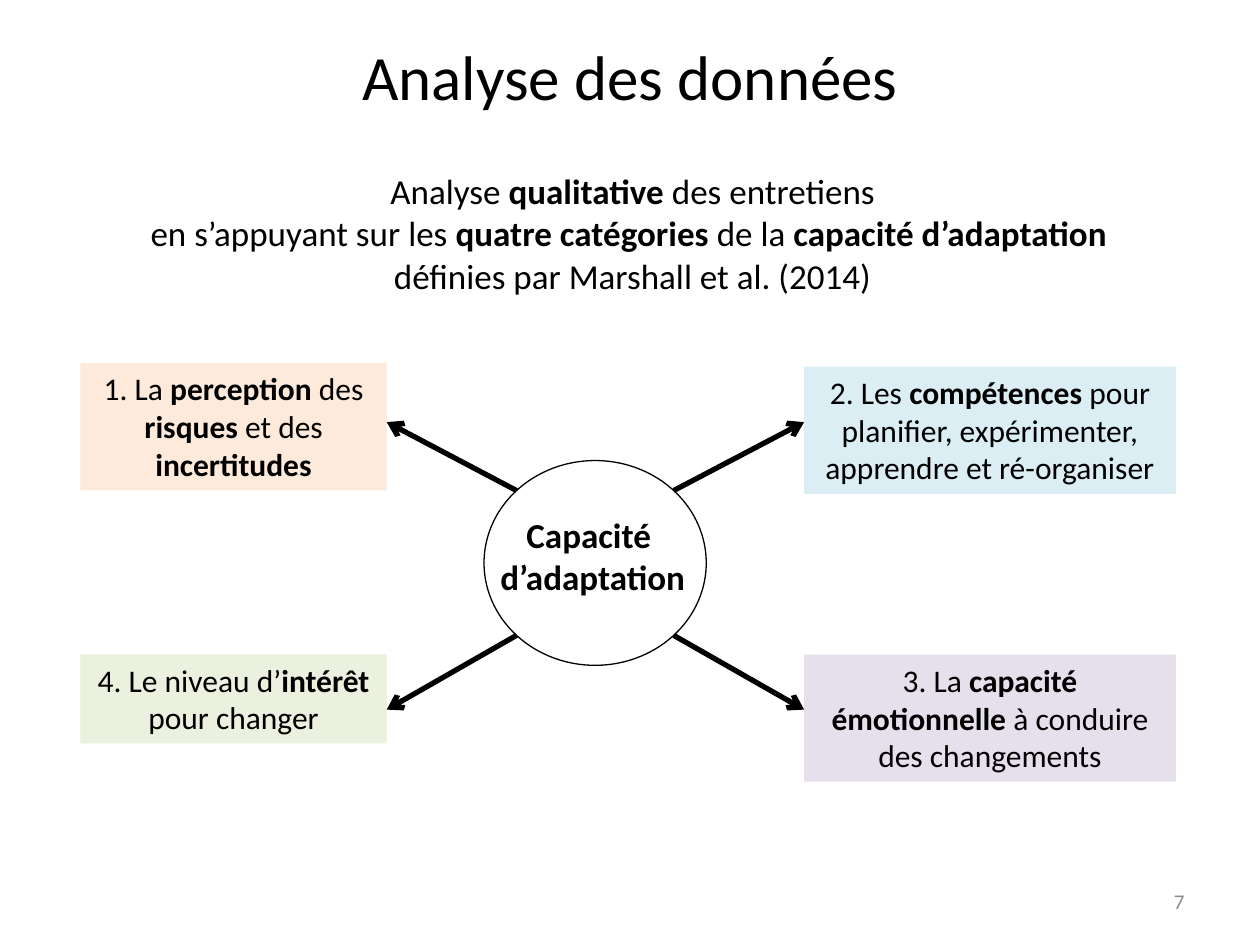
"""Build the slide on data analysis and the four sides of adaptive capacity."""
from math import sqrt
from lxml import etree
from pptx import Presentation
from pptx.dml.color import RGBColor
from pptx.enum.shapes import MSO_CONNECTOR, MSO_SHAPE
from pptx.enum.text import MSO_ANCHOR, MSO_AUTO_SIZE, PP_ALIGN
from pptx.oxml.ns import qn
from pptx.util import Pt

CENTER, RIGHT = PP_ALIGN.CENTER, PP_ALIGN.RIGHT
TOP, MIDDLE = MSO_ANCHOR.TOP, MSO_ANCHOR.MIDDLE
GROW = MSO_AUTO_SIZE.SHAPE_TO_FIT_TEXT
OVAL, RECT = MSO_SHAPE.OVAL, MSO_SHAPE.RECTANGLE
STRAIGHT = MSO_CONNECTOR.STRAIGHT

FONT = "Calibri"
COLORS = {"ink": "000000", "page": "8C8C8C", "peach": "FDEADA",
          "blue": "DBEEF4", "green": "EBF1DE", "mauve": "E6E0EC"}

TITLE = "Analyse des données"
INTRO = ["Analyse **qualitative** des entretiens",
         "en s’appuyant sur les **quatre catégories **de la **capacité d’adaptation **",
         "définies par Marshall et al. (2014)"]
HUB = ["**Capacité **", "**d’adaptation**"]
PAGE = "7"

LEFT, WIDE = (46, 175), (459.5, 212.4)
BOXES = [
    ("1. La **perception** des **risques** et des **incertitudes**",
     "peach", LEFT, 207.5, 72.7, -1, -1),
    ("2. Les **compétences** pour planifier, expérimenter, apprendre et ré-organiser",
     "blue", WIDE, 209.5, 72.7, 1, -1),
    ("4. Le niveau d’**intérêt** pour changer",
     "green", LEFT, 374, 50.9, -1, 1),
    ("3. La **capacité émotionnelle** à conduire des changements",
     "mauve", WIDE, 374, 72.7, 1, 1),
]
RING = (276.6, 263.2, 127, 117)
TIP_X = {-1: sum(LEFT), 1: WIDE[0]}
TIP_Y = {-1: 241.2, 1: 405.5}


def rgb(name):
    return RGBColor.from_string(COLORS[name])


def write(frame, lines, size, color="ink", align=CENTER, anchor=TOP):
    frame.word_wrap = True
    frame.vertical_anchor = anchor
    for n, line in enumerate(lines):
        para = frame.paragraphs[0] if n == 0 else frame.add_paragraph()
        para.alignment = align
        for k, part in enumerate(line.split("**")):
            if part:
                run = para.add_run()
                run.text = part
                font = run.font
                font.name, font.size, font.bold = FONT, Pt(size), k % 2 == 1
                font.color.rgb = rgb(color)


def add_text(slide, place, lines, size, **style):
    frame = slide.shapes.add_textbox(*map(Pt, place)).text_frame
    write(frame, lines, size, **style)
    return frame


def add_box(slide, text, fill, column, top, height):
    left, width = column
    box = slide.shapes.add_shape(RECT, Pt(left), Pt(top), Pt(width), Pt(height))
    box.shadow.inherit = False
    box.fill.solid()
    box.fill.fore_color.rgb = rgb(fill)
    box.line.fill.background()
    write(box.text_frame, [text], 18)
    box.text_frame.auto_size = GROW


def add_ring(slide):
    ring = slide.shapes.add_shape(OVAL, *map(Pt, RING))
    ring.shadow.inherit = False
    ring.fill.background()
    ring.line.color.rgb = rgb("ink")
    ring.line.width = Pt(0.75)


def add_arrow(slide, side, level):
    left, top, width, height = RING
    x = left + width / 2 + side * width / sqrt(8)
    y = top + height / 2 + level * height / sqrt(8)
    ends = (x, y, TIP_X[side], TIP_Y[level])
    arrow = slide.shapes.add_connector(STRAIGHT, *map(Pt, ends))
    arrow.line.color.rgb = rgb("ink")
    arrow.line.width = Pt(3)
    props = arrow._element.spPr
    etree.SubElement(props.get_or_add_ln(), qn("a:tailEnd"), type="arrow")
    etree.SubElement(props, qn("a:effectLst"))


def main():
    deck = Presentation()
    deck.slide_width, deck.slide_height = Pt(720), Pt(540)
    slide = deck.slides.add_slide(deck.slide_layouts[5])
    title = slide.shapes.title
    title.left, title.top, title.width, title.height = map(Pt, (36, -2, 648, 90))
    write(title.text_frame, [TITLE], 36, anchor=MIDDLE)
    add_text(slide, (516, 500.5, 168, 28.8), [PAGE], 12,
             color="page", align=RIGHT, anchor=MIDDLE)

    add_ring(slide)
    hub = add_text(slide, (277.5, 290, 122.4, 55.7), HUB, 20)
    hub.word_wrap = False
    hub.auto_size = GROW
    for *box, side, level in BOXES:
        add_box(slide, *box)
        add_arrow(slide, side, level)
    add_text(slide, (1.5, 93.6, 720, 80), INTRO, 20).auto_size = GROW
    deck.save("out.pptx")


if __name__ == "__main__":
    main()
